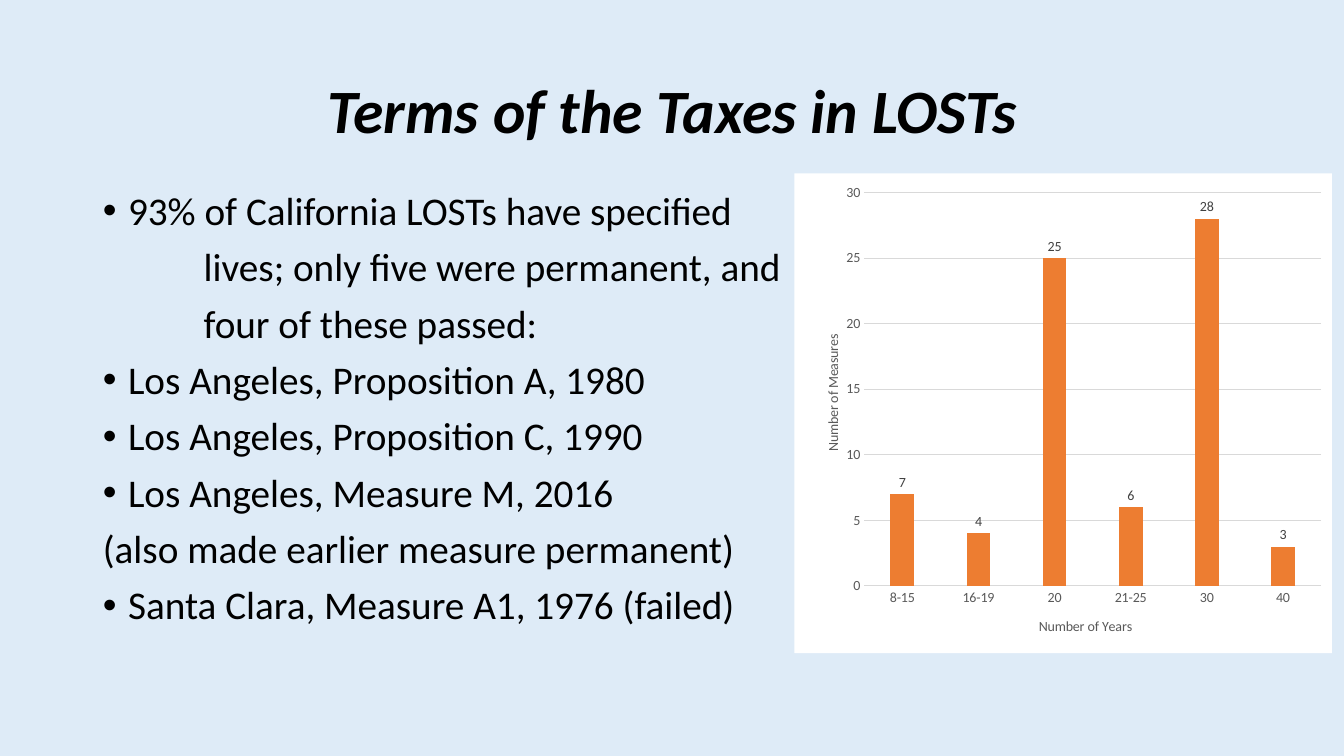
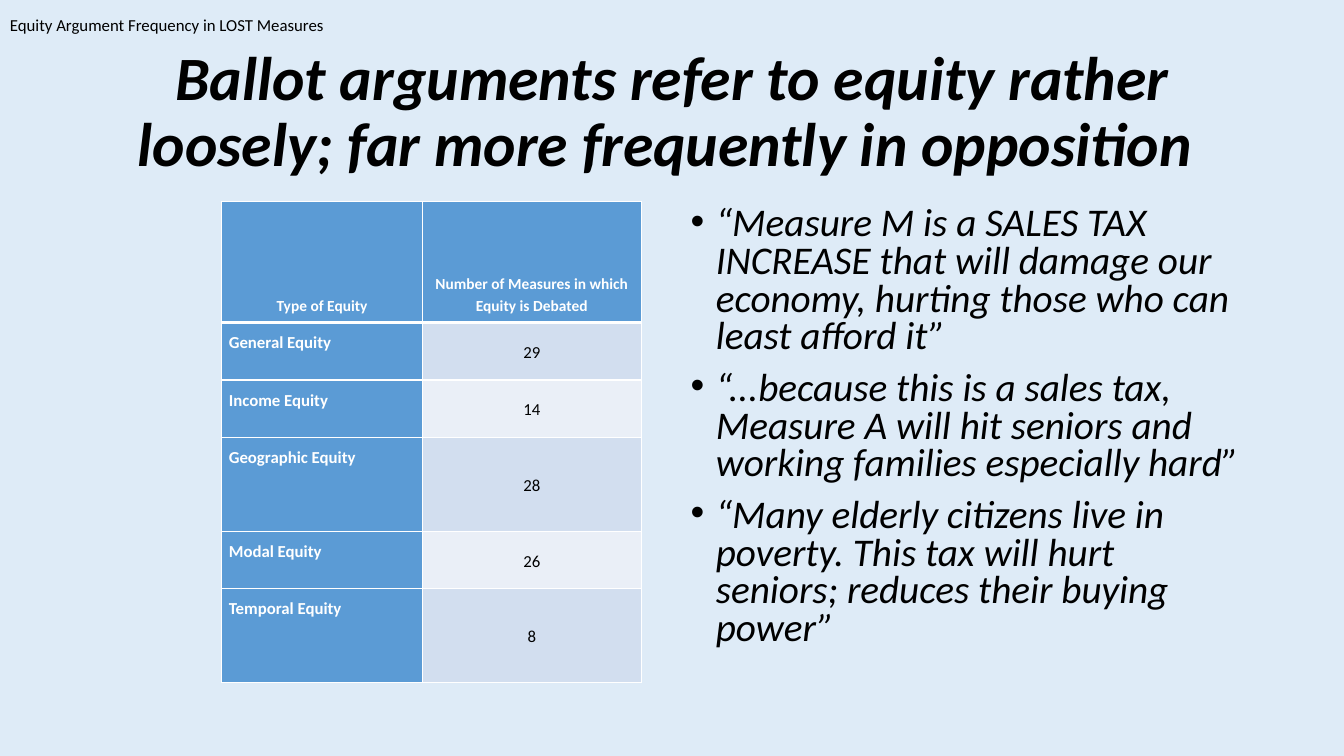
import pptx
import pptx.util
import pptx.dml.color
import pptx.chart.data
import pptx.enum.chart
import pptx.enum.text
import pptx.oxml
import pptx.oxml.ns

Inches, Pt = pptx.util.Inches, pptx.util.Pt
hue = pptx.dml.color.RGBColor.from_string
qn = pptx.oxml.ns.qn
Align, Anchor = pptx.enum.text.PP_ALIGN, pptx.enum.text.MSO_ANCHOR
BLACK, WHITE, BLUE = "000000", "FFFFFF", "5B9BD5"
GREY, RULE, PAPER = "595959", "D9D9D9", "DEEBF7"
FONT = "Calibri"


def write(frame, text, size=28, color=BLACK, bold=False, italic=False,
          align=None, anchor=None, lead=None, gap=None, indent=None):
    """Write one paragraph; indent is (left, first line, bulleted)."""
    para = frame.paragraphs[0]
    if para.text:
        para = frame.add_paragraph()
    run = para.add_run()
    run.text = text
    font = run.font
    font.name, font.size, font.bold, font.italic = FONT, Pt(size), bold, italic
    font.color.rgb = hue(color)
    if align is not None:
        para.alignment = align
    if anchor is not None:
        frame.vertical_anchor = anchor
    if lead:
        para.line_spacing = lead
    if gap is not None:
        para.space_before = Pt(gap)
    if indent:
        left, first, dot = indent
        props = para._p.get_or_add_pPr()
        props.set("marL", str(Inches(left)))
        props.set("indent", str(Inches(first)))
        if not dot:
            props.append(pptx.oxml.parse_xml(
                f'<a:buNone {pptx.oxml.ns.nsdecls("a")}/>'))


def place(node, index, **spots):
    """Fix a chart part at fractions of the chart area."""
    for old in node.findall(qn("c:layout")):
        node.remove(old)
    inner = '<c:layoutTarget val="inner"/>' if "w" in spots else ""
    modes = "".join(f'<c:{key}Mode val="edge"/>' for key in "xy")
    values = "".join(f'<c:{key} val="{val}"/>' for key, val in spots.items())
    node.insert(index, pptx.oxml.parse_xml(
        f'<c:layout {pptx.oxml.ns.nsdecls("c")}><c:manualLayout>'
        f'{inner}{modes}{values}</c:manualLayout></c:layout>'))


deck = pptx.Presentation()
deck.slide_width, deck.slide_height = Inches(13.33), Inches(7.5)
back = deck.slide_master.background.fill
back.solid()
back.fore_color.rgb = hue(PAPER)

# Both slides: title and list
dot, plain, deep = (0.25, -0.25, True), (0, 0, False), (1, 0, False)
pages = [
    ("Terms of the Taxes in LOSTs", (0.92, 1.85, 10.96, 4.91), 0.9, False, [
        ("93% of California LOSTs have specified", dot),
        ("lives; only five were permanent, and", deep),
        ("four of these passed:", deep),
        ("Los Angeles, Proposition A, 1980", dot),
        ("Los Angeles, Proposition C, 1990", dot),
        ("Los Angeles, Measure M, 2016", dot),
        ("(also made earlier measure permanent)", plain),
        ("Santa Clara, Measure A1, 1976 (failed)", dot)]),
    ("Ballot arguments refer to equity rather loosely; "
     "far more frequently in opposition ", (6.75, 2, 5.67, 4.76), 0.8, True, [
        ("“Measure M is a SALES TAX INCREASE that will damage our economy, "
         "hurting those who can least afford it”", dot),
        ("“...because this is a sales tax, Measure A will hit seniors and "
         "working families especially hard”", dot),
        ("“Many elderly citizens live in poverty. This tax will hurt "
         "seniors; reduces their buying power”", dot)]),
]
for head, box, lead, slant, items in pages:
    slide = deck.slides.add_slide(deck.slide_layouts[1])
    title, body = slide.placeholders
    for shape, spot in ((title, (0.92, 0.4, 11.5, 1.45)), (body, box)):
        shape.left, shape.top, shape.width, shape.height = map(Inches, spot)
        shape.text_frame.auto_size = pptx.enum.text.MSO_AUTO_SIZE.NONE
    write(title.text_frame, head, size=44, bold=True, italic=True,
          align=Align.CENTER, anchor=Anchor.MIDDLE, lead=0.9)
    for text, indent in items:
        write(body.text_frame, text, italic=slant, lead=lead, gap=10,
              indent=indent)

terms, equity = deck.slides

# Chart of tax terms
data = pptx.chart.data.CategoryChartData()
data.categories = ["8-15", "16-19", "20", "21-25", "30", "40"]
data.add_series("Series 1", (7, 4, 25, 6, 28, 3))
chart = terms.shapes.add_chart(
    pptx.enum.chart.XL_CHART_TYPE.COLUMN_CLUSTERED, Inches(7.88),
    Inches(1.72), Inches(5.33), Inches(4.76), data).chart
chart.has_legend = chart.has_title = False
chart.font.name, chart.font.size = FONT, Pt(10)
chart.font.color.rgb = hue(GREY)
space = chart._chartSpace
space.find(qn("c:chart")).addnext(pptx.oxml.parse_xml(
    f'<c:spPr {pptx.oxml.ns.nsdecls("c", "a")}><a:solidFill>'
    f'<a:srgbClr val="{WHITE}"/></a:solidFill>'
    '<a:ln><a:noFill/></a:ln></c:spPr>'))
place(space.find(".//" + qn("c:plotArea")), 0, x=0.13, y=0.04, w=0.85, h=0.82)

plot = chart.plots[0]
plot.gap_width, plot.overlap, plot.vary_by_categories = 219, -27, False
bars = plot.series[0].format.fill
bars.solid()
bars.fore_color.rgb = hue("ED7D31")
plot.has_data_labels = True
tags = plot.data_labels
tags.show_value = True
tags.position = pptx.enum.chart.XL_LABEL_POSITION.OUTSIDE_END
tags.font.name, tags.font.size = FONT, Pt(10)
tags.font.color.rgb = hue("404040")

cats, vals = chart.category_axis, chart.value_axis
for axis, name, x, y in ((cats, "Number of Years", 0.45, 0.92),
                         (vals, "Number of Measures", 0.05, 0.33)):
    axis.major_tick_mark = pptx.enum.chart.XL_TICK_MARK.NONE
    write(axis.axis_title.text_frame, name, size=10, color=GREY)
    place(axis.axis_title._element, 1, x=x, y=y)
vals.minimum_scale, vals.maximum_scale, vals.major_unit = 0, 30, 5
vals.format.line.fill.background()
for line in (cats.format.line, vals.major_gridlines.format.line):
    line.color.rgb = hue(RULE)
    line.width = Pt(0.75)

# Table of equity arguments
rows = [("Type of Equity", "Number of Measures in which Equity is Debated"),
        ("General Equity", "29"), ("Income Equity", "14"),
        ("Geographic Equity", "28"), ("Modal Equity", "26"),
        ("Temporal Equity", "8")]
table = equity.shapes.add_table(len(rows), 2, Inches(2.2), Inches(2),
                                Inches(4.16), Inches(4.77)).table
for col, width in zip(table.columns, (1.99, 2.17)):
    col.width = Inches(width)
for r, (row, high) in enumerate(zip(rows, (1.2, 0.57, 0.57, 0.93, 0.57, 0.93))):
    table.rows[r].height = Inches(high)
    for c, text in enumerate(row):
        cell = table.cell(r, c)
        cell.margin_left = cell.margin_right = Inches(0.07)
        cell.margin_top = cell.margin_bottom = Inches(0.07)
        label = r == 0 or c == 0
        cell.fill.solid()
        cell.fill.fore_color.rgb = hue(
            BLUE if label else "D2DEEF" if r % 2 else "EAEFF7")
        write(cell.text_frame, text, size=12 if r else 11, bold=label,
              color=WHITE if label else BLACK, lead=1.15,
              align=Align.LEFT if r and c == 0 else Align.CENTER)
        cell.vertical_anchor = (Anchor.BOTTOM if r == 0 else
                                Anchor.MIDDLE if c else Anchor.TOP)
        for n, side in enumerate("LRTB"):
            thick = (r, side) in ((0, "B"), (1, "T"))
            cell._tc.get_or_add_tcPr().insert(n, pptx.oxml.parse_xml(
                f'<a:ln{side} {pptx.oxml.ns.nsdecls("a")} '
                f'w="{Pt(3 if thick else 1)}"><a:solidFill>'
                f'<a:srgbClr val="{WHITE}"/></a:solidFill></a:ln{side}>'))

note = equity.shapes.add_textbox(0, 0, Inches(13.33), Inches(0.5)).text_frame
note.word_wrap = True
write(note, "Equity Argument Frequency in LOST Measures", size=12,
      anchor=Anchor.MIDDLE)

deck.save("out.pptx")
